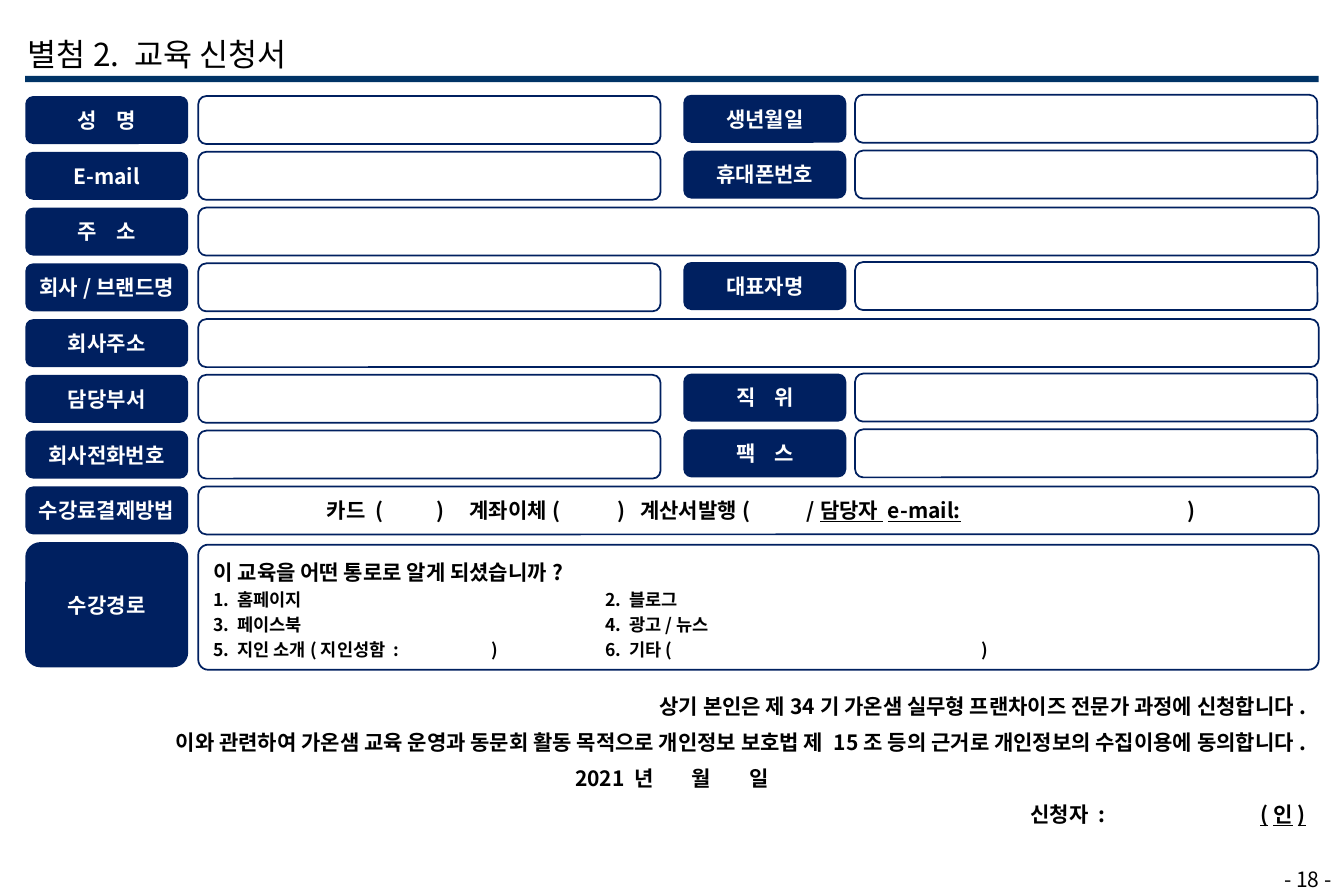
from lxml import etree
from pptx import Presentation
from pptx import util as u
from pptx.dml.color import RGBColor
from pptx.enum import shapes, text
from pptx.oxml.ns import qn

COLORS = {"navy": "002060", "rule": "003366", "white": "FFFFFF", "black": "000000"}
FONT = "Noto Sans CJK KR"
LEFT, RIGHT = 0.2, 10.44
TOP, PITCH, ROW_H = 0.76, 3.53 / 8, 0.38
LABEL_W, FIELD_W = 1.29, 3.66
FIELD_X, RIGHT_LABEL_X, RIGHT_FIELD_X = 1.57, 5.41, 6.77
WIDE_W = RIGHT - FIELD_X
UNDER = {"underline": True}
ALIGN = text.PP_ALIGN

# Each row: left label, right label (None where one field spans the row)
ROWS = [
    ("성 명", "생년월일"),
    ("E-mail", "휴대폰번호"),
    ("주 소", None),
    ("회사/브랜드명", "대표자명"),
    ("회사주소", None),
    ("담당부서", "직 위"),
    ("회사전화번호", "팩 스"),
    ("수강료결제방법", None),
]


def rgb(name):
    return RGBColor.from_string(COLORS[name])


def set_all(target, values):
    for key, value in values.items():
        setattr(target, key, value)


def set_frame(frame, **values):
    base = {"margin_left": 0, "margin_right": 0, "margin_top": 0, "margin_bottom": 0,
            "word_wrap": True, "auto_size": text.MSO_AUTO_SIZE.NONE,
            "vertical_anchor": text.MSO_ANCHOR.MIDDLE}
    set_all(frame, {**base, **values})


def add_run(paragraph, words, color="black", size=12, bold=True, spread=0, **extra):
    run = paragraph.add_run()
    run.text = words
    set_all(run.font, {"name": FONT, "size": u.Pt(size), "bold": bold, **extra})
    run.font.color.rgb = rgb(color)
    props = run._r.get_or_add_rPr()
    etree.SubElement(props, qn("a:ea")).set("typeface", FONT)
    if spread:
        props.set("spc", str(spread * 100))


def add_spread(paragraph, words, spread, **style):
    """Widen the single spaces between words by the given points."""
    for i, word in enumerate(words.split(" ")):
        if i:
            add_run(paragraph, " ", spread=spread, **style)
        add_run(paragraph, word, **style)


def set_tabs(paragraph, stops):
    tabs = etree.SubElement(paragraph._p.get_or_add_pPr(), qn("a:tabLst"))
    for stop in stops:
        tab = etree.SubElement(tabs, qn("a:tab"))
        tab.set("pos", str(u.Inches(stop)))
        tab.set("algn", "l")


def next_paragraph(frame, index):
    return frame.add_paragraph() if index else frame.paragraphs[0]


def add_box(slide, x, y, w, h, kind=shapes.MSO_SHAPE.ROUNDED_RECTANGLE,
            fill=None, line=None, corner=None):
    box = slide.shapes.add_shape(kind, *map(u.Inches, (x, y, w, h)))
    box.shadow.inherit = False
    if fill:
        box.fill.solid()
        box.fill.fore_color.rgb = rgb(fill)
    else:
        box.fill.background()
    if line:
        box.line.color.rgb = rgb(line)
        box.line.width = u.Pt(1)
    else:
        box.line.fill.background()
    if corner:
        box.adjustments[0] = corner
    return box


def add_label(slide, x, y, caption, h=ROW_H, corner=0.167):
    label = add_box(slide, x, y, LABEL_W, h, fill="navy", corner=corner)
    set_frame(label.text_frame, word_wrap=False)
    paragraph = label.text_frame.paragraphs[0]
    paragraph.alignment = ALIGN.CENTER
    add_spread(paragraph, caption, 8, color="white")


def add_field(slide, x, y, w, h=ROW_H, corner=0.167):
    return add_box(slide, x, y, w, h, line="navy", corner=corner)


def add_heading(slide, x, y, w, h):
    title = slide.shapes.title
    set_all(title, dict(zip(("left", "top", "width", "height"), map(u.Inches, (x, y, w, h)))))
    set_frame(title.text_frame, margin_left=u.Inches(0.1), margin_top=u.Inches(0.05),
              word_wrap=False, vertical_anchor=text.MSO_ANCHOR.TOP)
    paragraph = title.text_frame.paragraphs[0]
    paragraph.alignment = ALIGN.LEFT
    add_run(paragraph, "별첨2. 교육 신청서", size=18, bold=False)
    add_box(slide, LEFT, 0.6, RIGHT - LEFT, 0.05,
            kind=shapes.MSO_SHAPE.RECTANGLE, fill="rule")


def add_applicant_rows(slide):
    """Draw the rows and return the field of the last one."""
    for i, (left_label, right_label) in enumerate(ROWS):
        y = TOP + i * PITCH
        add_label(slide, LEFT, y, left_label)
        field = add_field(slide, FIELD_X, y, FIELD_W if right_label else WIDE_W)
        if right_label:
            add_label(slide, RIGHT_LABEL_X, y - 0.01, right_label)
            add_field(slide, RIGHT_FIELD_X, y - 0.01, FIELD_W)
    return field


def fill_payment(field):
    frame = field.text_frame
    set_frame(frame, margin_left=u.Inches(1))
    paragraph = frame.paragraphs[0]
    paragraph.alignment = ALIGN.LEFT
    set_tabs(paragraph, [0.87, 1.13, 2.3, 2.48, 3.8, 6.81])
    add_run(paragraph, "카드 (\t)\t계좌이체(\t)\t계산서발행(\t/")
    add_run(paragraph, "담당자 e-mail:\t", **UNDER)
    add_run(paragraph, ")")


def add_route(slide, y, h):
    add_label(slide, LEFT, y, "수강경로", h, 0.12)
    frame = add_field(slide, FIELD_X, y + 0.02, WIDE_W, h, 0.08).text_frame
    set_frame(frame, margin_left=u.Inches(0.1))
    column = 3.1
    lines = [
        ([], 12, [("이 교육을 어떤 통로로 알게 되셨습니까?", {})]),
        ([column], 10, [("1. 홈페이지\t2. 블로그", {})]),
        ([column], 10, [("3. 페이스북\t4. 광고/뉴스", {})]),
        ([2.2, column, 6.05], 10, [("5. 지인 소개(지인성함 :\t)\t6. 기타(", {}),
                                   ("\t", UNDER), (" )", {})]),
    ]
    for i, (stops, size, runs) in enumerate(lines):
        paragraph = next_paragraph(frame, i)
        set_all(paragraph, {"alignment": ALIGN.LEFT, "line_spacing": 1.2})
        if stops:
            set_tabs(paragraph, stops)
        for words, style in runs:
            add_run(paragraph, words, size=size, **style)


def add_declaration(slide, x, y, w, h):
    frame = slide.shapes.add_textbox(*map(u.Inches, (x, y, w, h))).text_frame
    set_frame(frame, margin_left=u.Inches(0.1), margin_right=u.Inches(0.1),
              margin_top=u.Inches(0.05), vertical_anchor=text.MSO_ANCHOR.TOP)
    aligns = [ALIGN.RIGHT, ALIGN.RIGHT, ALIGN.CENTER, ALIGN.LEFT]
    for i, align in enumerate(aligns):
        paragraph = next_paragraph(frame, i)
        paragraph.alignment = align
        if i:
            paragraph.space_before = u.Pt(6)
    consent, agreement, date, signature = frame.paragraphs
    add_run(consent, "상기 본인은 제34기 가온샘 실무형 프랜차이즈 전문가 과정에 신청합니다.")
    add_run(agreement, "이와 관련하여 가온샘 교육 운영과 동문회 활동 목적으로 개인정보 보호법 제 15조 "
                       "등의 근거로 개인정보의 수집이용에 동의합니다.")
    add_run(date, "2021 ")
    add_spread(date, "년 월 일", 19)
    set_tabs(signature, [7.86, 9.68])
    add_run(signature, "\t신청자 : ")
    add_run(signature, "\t(인)", **UNDER)


def add_page_number(slide, x, y, w, h):
    frame = slide.shapes.add_textbox(*map(u.Inches, (x, y, w, h))).text_frame
    set_frame(frame, margin_right=u.Inches(0.1))
    paragraph = frame.paragraphs[0]
    paragraph.alignment = ALIGN.RIGHT
    add_run(paragraph, "- 18 -", bold=False)


def main():
    deck = Presentation()
    deck.slide_width, deck.slide_height = u.Inches(10.64), u.Inches(7.09)
    slide = deck.slides.add_slide(deck.slide_layouts[5])
    add_heading(slide, 0.12, 0.23, 2.34, 0.4)
    fill_payment(add_applicant_rows(slide))
    add_route(slide, TOP + len(ROWS) * PITCH, 0.99)
    add_declaration(slide, LEFT, 5.44, RIGHT - LEFT, 1.21)
    add_page_number(slide, 9.63, 6.83, 1.01, 0.26)
    deck.save("out.pptx")


if __name__ == "__main__":
    main()
